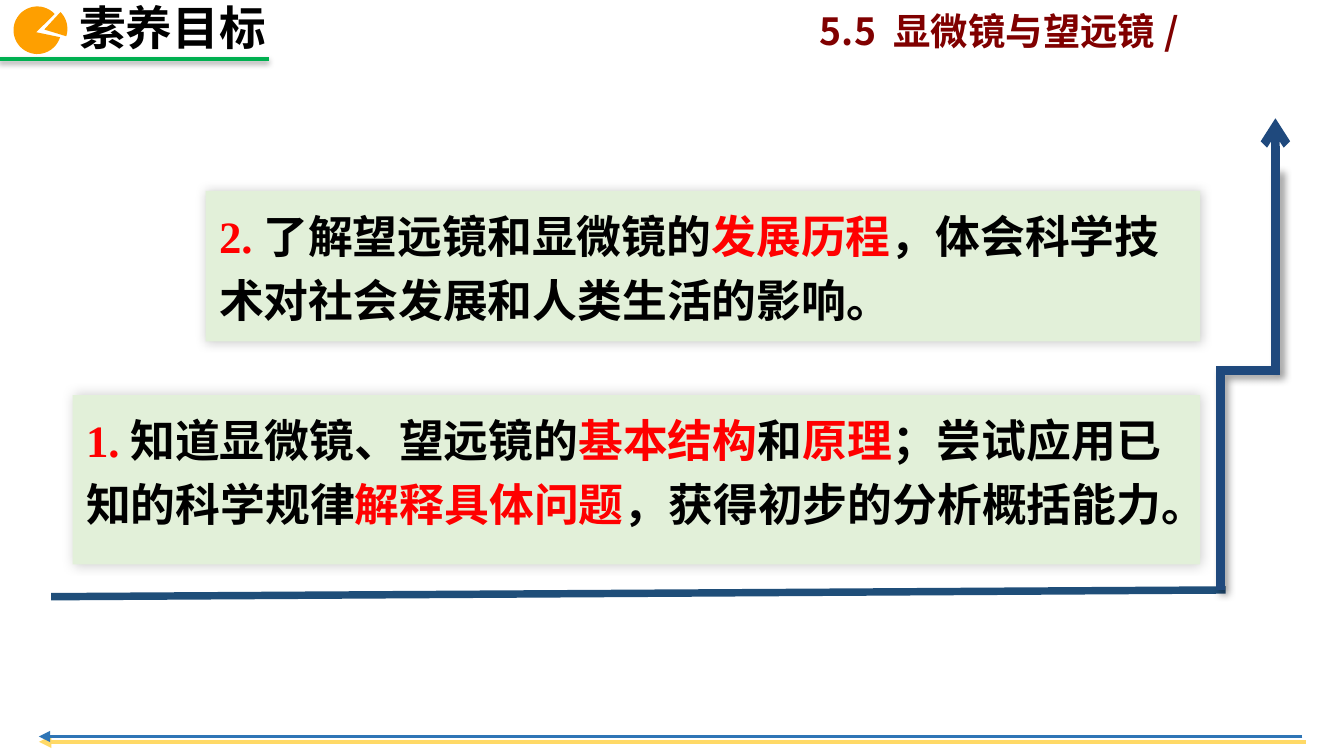
import math

from lxml import etree
from pptx import Presentation
from pptx import util as u
from pptx.dml.color import RGBColor
from pptx.enum import shapes, text
from pptx.oxml.ns import qn

BLACK = RGBColor(0x00, 0x00, 0x00)
RED = RGBColor(0xFF, 0x00, 0x00)
MAROON = RGBColor(0x80, 0x00, 0x00)
GREEN = RGBColor(0x00, 0xB0, 0x50)
PALE_GREEN = RGBColor(0xE2, 0xF0, 0xD9)
ORANGE = RGBColor(0xFE, 0x9F, 0x00)
YELLOW = RGBColor(0xFF, 0xD9, 0x66)
BLUE = RGBColor(0x2E, 0x75, 0xB6)
STEEL = RGBColor(0x1F, 0x4E, 0x79)
NAVY = RGBColor(0x1F, 0x49, 0x7D)

CJK_FONT = "Noto Sans CJK SC"
LATIN_FONT = "Times New Roman"
COLUMNS, ROWS = 100, 56.25
TWO_CONTENT = 3


def add_child(parent, tag, **attributes):
    child = etree.SubElement(parent, qn(tag))
    for name, value in attributes.items():
        child.set(name, str(value))
    return child


class GoalPage:
    """Style and current slide; all lengths are in grid columns and rows."""

    def __init__(self, deck):
        self.page = deck.slides.add_slide(deck.slide_layouts[TWO_CONTENT])
        self.cell_width = deck.slide_width / COLUMNS
        self.cell_height = deck.slide_height / ROWS

    def point(self, column, row):
        return round(column * self.cell_width), round(row * self.cell_height)

    def place(self, box, left, top, width, height):
        box.left, box.top = self.point(left, top)
        box.width, box.height = self.point(width, height)

    def shadow(self, item, alpha=None, blur=0, distance=0, angle=0):
        effects = add_child(item._element.spPr, "a:effectLst")
        if alpha:
            outer = add_child(effects, "a:outerShdw", blurRad=u.Pt(blur), dist=u.Pt(distance),
                              dir=angle * 60000, algn="ctr", rotWithShape=0)
            color = add_child(outer, "a:srgbClr", val=BLACK)
            add_child(color, "a:alpha", val=alpha * 1000)

    def font(self, para, size, latin, color):
        para.font.size = u.Pt(size)
        para.font.bold = True
        para.font.color.rgb = color
        para.font.name = latin
        defaults = para._p.get_or_add_pPr().find(qn("a:defRPr"))
        add_child(defaults, "a:ea", typeface=CJK_FONT)

    def heading(self, box, area, words, size, color, wrap):
        self.place(box, *area)
        frame = box.text_frame
        frame.auto_size = text.MSO_AUTO_SIZE.NONE
        frame.word_wrap = wrap
        frame.vertical_anchor = text.MSO_ANCHOR.MIDDLE
        frame.margin_left = frame.margin_right = u.Inches(0.07)
        frame.margin_top = frame.margin_bottom = u.Inches(0.04)
        para = frame.paragraphs[0]
        para.text = words
        para.alignment = text.PP_ALIGN.LEFT
        self.font(para, size, CJK_FONT, color)

    def title(self, area, words):
        self.heading(self.page.shapes.title, area, words, 25, BLACK, False)

    def label(self, area, words):
        box = self.page.shapes.add_textbox(0, 0, 0, 0)
        self.heading(box, area, words, 20, MAROON, True)

    def goal(self, number, area, parts):
        """Parts alternate between red and black, beginning with red."""
        box = self.page.placeholders[number]
        self.place(box, *area)
        box.fill.solid()
        box.fill.fore_color.rgb = PALE_GREEN
        self.shadow(box, 20, 6, 0, 315)
        frame = box.text_frame
        frame.auto_size = text.MSO_AUTO_SIZE.NONE
        frame.vertical_anchor = text.MSO_ANCHOR.TOP
        para = frame.paragraphs[0]
        para.line_spacing = 1.2
        para.space_before = u.Pt(0)
        properties = para._p.get_or_add_pPr()
        for name, value in (("marL", "0"), ("indent", "0"), ("hangingPunct", "1")):
            properties.set(name, value)
        add_child(properties, "a:buNone")
        self.font(para, 24, LATIN_FONT, BLACK)
        for index, words in enumerate(parts):
            span = para.add_run()
            span.text = words
            span.font.color.rgb = BLACK if index % 2 else RED

    def line(self, start, end, color, width, head=None, tail=None, shadow=(),
             kind=shapes.MSO_CONNECTOR.STRAIGHT):
        line = self.page.shapes.add_connector(kind, *self.point(*start), *self.point(*end))
        line.line.color.rgb = color
        line.line.width = u.Pt(width)
        outline = line._element.spPr.find(qn("a:ln"))
        add_child(outline, "a:miter", lim=800000)
        if head:
            add_child(outline, "a:headEnd", type=head)
        if tail:
            add_child(outline, "a:tailEnd", type=tail)
        self.shadow(line, *shadow)
        return line

    def step(self, start, end, bend, color, width, shadow):
        """Elbow that leaves upwards: a flat elbow turned by a quarter."""
        middle_x, middle_y = ((a + b) / 2 for a, b in zip(start, end))
        half_rise, half_run = (start[1] - end[1]) / 2, (end[0] - start[0]) / 2
        elbow = self.line((middle_x + half_rise, middle_y + half_run),
                          (middle_x - half_rise, middle_y - half_run),
                          color, width, shadow=shadow, kind=shapes.MSO_CONNECTOR.ELBOW)
        properties = elbow._element.spPr
        properties.find(qn("a:xfrm")).set("rot", str(90 * 60000))
        guides = properties.find(qn("a:prstGeom")).get_or_add_avLst()
        add_child(guides, "a:gd", name="adj1", fmla=f"val {round(bend * 100000)}")

    def pie(self, radius, sectors, color):
        """Each sector is its tip, its arc's centre, and the arc's two angles."""
        builder = None
        steps = 40
        for tip, center, first, last in sectors:
            angles = [math.radians(first + (last - first) * i / steps) for i in range(steps + 1)]
            arc = [self.point(center[0] + radius * math.cos(angle),
                              center[1] + radius * math.sin(angle)) for angle in angles]
            if builder is None:
                builder = self.page.shapes.build_freeform(*self.point(*tip))
            else:
                builder.move_to(*self.point(*tip))
            builder.add_line_segments(arc, close=True)
        pie = builder.convert_to_shape()
        pie.shadow.inherit = False
        pie.fill.solid()
        pie.fill.fore_color.rgb = color
        pie.line.fill.background()


def main():
    deck = Presentation()
    deck.slide_width, deck.slide_height = u.Emu(9144000), u.Emu(5143500)
    page = GoalPage(deck)

    # Header
    page.label((60.3, 0.2, 28.9, 4.1), "5.5 显微镜与望远镜/")
    page.line((-0.1, 4.4), (20, 4.4), GREEN, 2, shadow=(38, 3.1, 1.6, 90))
    page.pie(1.77, [((2.7, 2.4), (2.78, 2.25), -43, -343),
                    ((3.3, 2.2), (3.25, 2.15), -45, 18)], ORANGE)
    page.title((5.2, -0.5, 15.6, 5), "素养目标")

    # Footer arrows
    page.line((2.9, 55.2), (97.2, 55.2), YELLOW, 2.25, head="triangle")
    page.line((96.9, 54.8), (2.9, 54.8), BLUE, 1.5, tail="triangle")

    # Learning goals
    page.goal(1, (5.4, 29.4, 83.9, 12.6),
              ["1.", "知道显微镜、望远镜的", "基本结构", "和", "原理",
               "；尝试应用已知的科学规律", "解释具体问题", "，获得初步的分析概括能力。"])
    page.goal(2, (15.3, 14.2, 74, 11.2),
              ["2.", "了解望远镜和显微镜的", "发展历程",
               "，体会科学技术对社会发展和人类生活的影响。"])

    # Rising stair
    page.line((3.8, 44.4), (91.2, 43.9), STEEL, 4)
    page.step((90.8, 43.9), (94.9, 12.5), 0.52, NAVY, 4.5, (40, 4, 3, 45))
    page.line((94.9, 19.9), (94.9, 8.8), NAVY, 4.5, tail="arrow")

    deck.save("out.pptx")


if __name__ == "__main__":
    main()
